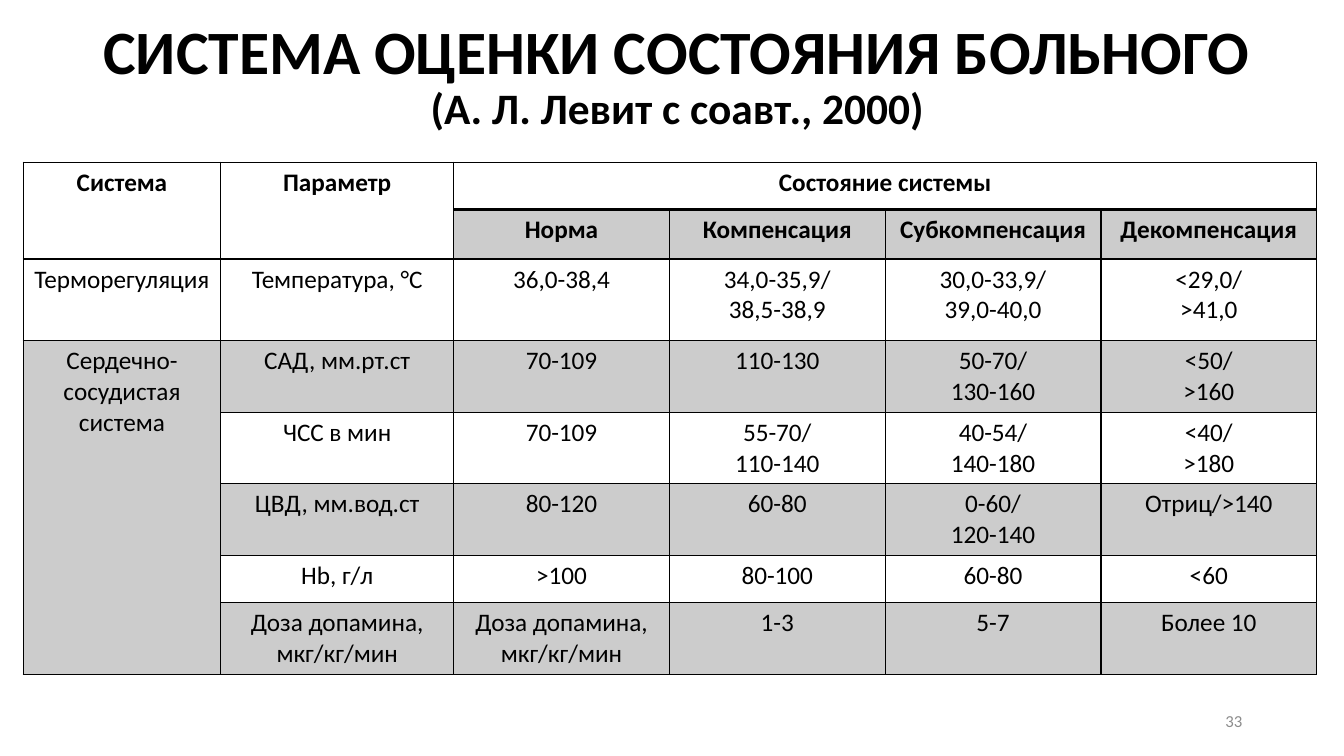
from lxml import etree
from pptx import Presentation
from pptx.dml.color import RGBColor
from pptx.enum.text import MSO_ANCHOR, MSO_AUTO_SIZE, PP_ALIGN
from pptx.oxml.ns import qn
from pptx.util import Inches, Pt

CENTER, RIGHT = PP_ALIGN.CENTER, PP_ALIGN.RIGHT
MIDDLE = MSO_ANCHOR.MIDDLE
NO_AUTOFIT = MSO_AUTO_SIZE.NONE
TITLE_ONLY = 5
FONT = "Calibri"
BLACK, WHITE, SHADE, GREY = "000000", "FFFFFF", "CCCCCC", "8C8C8C"

COLUMN_WIDTHS = [1.96, 2.31] + [2.14] * 4
ROW_HEIGHTS = [0.47, 0.49, 0.81] + [0.47] * 5
HEADER_ROWS = 2
MERGES = [((0, 0), (1, 0)), ((0, 1), (1, 1)), ((0, 2), (0, 5)), ((3, 0), (7, 0))]
ROWS = [
    ["Система", "Параметр", "Состояние системы", "", "", ""],
    ["", "", "Норма", "Компенсация", "Субкомпенсация", "Декомпенсация"],
    ["Терморегуляция", "Температура, °С", "36,0-38,4",
     "34,0-35,9/\n38,5-38,9", "30,0-33,9/\n39,0-40,0", "<29,0/\n>41,0"],
    ["Сердечно-сосудистая\nсистема", "САД, мм.рт.ст", "70-109",
     "110-130", "50-70/\n130-160", "<50/\n>160"],
    ["", "ЧСС в мин", "70-109", "55-70/\n110-140", "40-54/\n140-180", "<40/\n>180"],
    ["", "ЦВД, мм.вод.ст", "80-120", "60-80", "0-60/\n120-140", "Отриц/>140"],
    ["", "Hb, г/л", ">100", "80-100", "60-80", "<60"],
    ["", "Доза допамина, мкг/кг/мин", "Доза допамина, мкг/кг/мин",
     "1-3", "5-7", "Более 10"],
]


def rgb(value):
    """Return the colour for a hex string."""
    return RGBColor.from_string(value)


def format_run(run, size, color=BLACK, bold=False):
    """Set the font of one run."""
    run.font.name = FONT
    run.font.size = Pt(size)
    run.font.bold = bold
    run.font.color.rgb = rgb(color)


def add_title(slide, heading, authors):
    """Place the two-line title in its placeholder."""
    title = slide.shapes.title
    title.left, title.top = Inches(0.52), Inches(0.15)
    title.width, title.height = Inches(12.39), Inches(1.24)
    frame = title.text_frame
    frame.auto_size = NO_AUTOFIT
    frame.word_wrap = True
    frame.vertical_anchor = MIDDLE
    paragraph = frame.paragraphs[0]
    paragraph.text = f"{heading}\v{authors}"
    paragraph.alignment = CENTER
    paragraph.line_spacing = 0.9
    for run, size in zip(paragraph.runs, (44, 31)):
        format_run(run, size, bold=True)


def set_borders(cell, top, bottom):
    """Draw black borders of the given top and bottom widths around a cell."""
    properties = cell._tc.get_or_add_tcPr()
    widths = {"a:lnL": 1, "a:lnR": 1, "a:lnT": top, "a:lnB": bottom}
    for tag, width in widths.items():
        line = etree.SubElement(properties, qn(tag), w=str(Pt(width)))
        fill = etree.SubElement(line, qn("a:solidFill"))
        etree.SubElement(fill, qn("a:srgbClr"), val=BLACK)


def fill_cell(cell, text, row):
    """Write and format one table cell according to its row."""
    set_borders(cell, top=2 if row == 1 else 1, bottom=2 if row == 0 else 1)
    cell.fill.solid()
    cell.fill.fore_color.rgb = rgb(SHADE if row % 2 else WHITE)
    if not text:
        return
    cell.text_frame.text = text
    for paragraph in cell.text_frame.paragraphs:
        paragraph.alignment = CENTER
        for run in paragraph.runs:
            format_run(run, 18, bold=row < HEADER_ROWS)


def add_assessment_table(slide):
    """Add the table of parameters and system states."""
    table = slide.shapes.add_table(
        len(ROWS), len(COLUMN_WIDTHS), Inches(0.23), Inches(1.61),
        Inches(sum(COLUMN_WIDTHS)), Inches(sum(ROW_HEIGHTS))).table
    table.first_row = table.horz_banding = False
    for column, width in zip(table.columns, COLUMN_WIDTHS):
        column.width = Inches(width)
    for table_row, height in zip(table.rows, ROW_HEIGHTS):
        table_row.height = Inches(height)
    for first, last in MERGES:
        table.cell(*first).merge(table.cell(*last))
    for row, texts in enumerate(ROWS):
        for column, text in enumerate(texts):
            fill_cell(table.cell(row, column), text, row)


def add_page_number(slide, number):
    """Add the grey page number at the lower right."""
    box = slide.shapes.add_textbox(Inches(9.42), Inches(6.95), Inches(3), Inches(0.4))
    frame = box.text_frame
    frame.word_wrap = True
    frame.vertical_anchor = MIDDLE
    frame.text = number
    frame.paragraphs[0].alignment = RIGHT
    format_run(frame.paragraphs[0].runs[0], 12, GREY)


def main():
    """Build and save the slide."""
    deck = Presentation()
    deck.slide_width, deck.slide_height = Inches(13.33), Inches(7.5)
    slide = deck.slides.add_slide(deck.slide_layouts[TITLE_ONLY])
    add_title(slide, "СИСТЕМА ОЦЕНКИ СОСТОЯНИЯ БОЛЬНОГО", "(А. Л. Левит с соавт., 2000)")
    add_assessment_table(slide)
    add_page_number(slide, "33")
    deck.save("out.pptx")


if __name__ == "__main__":
    main()
